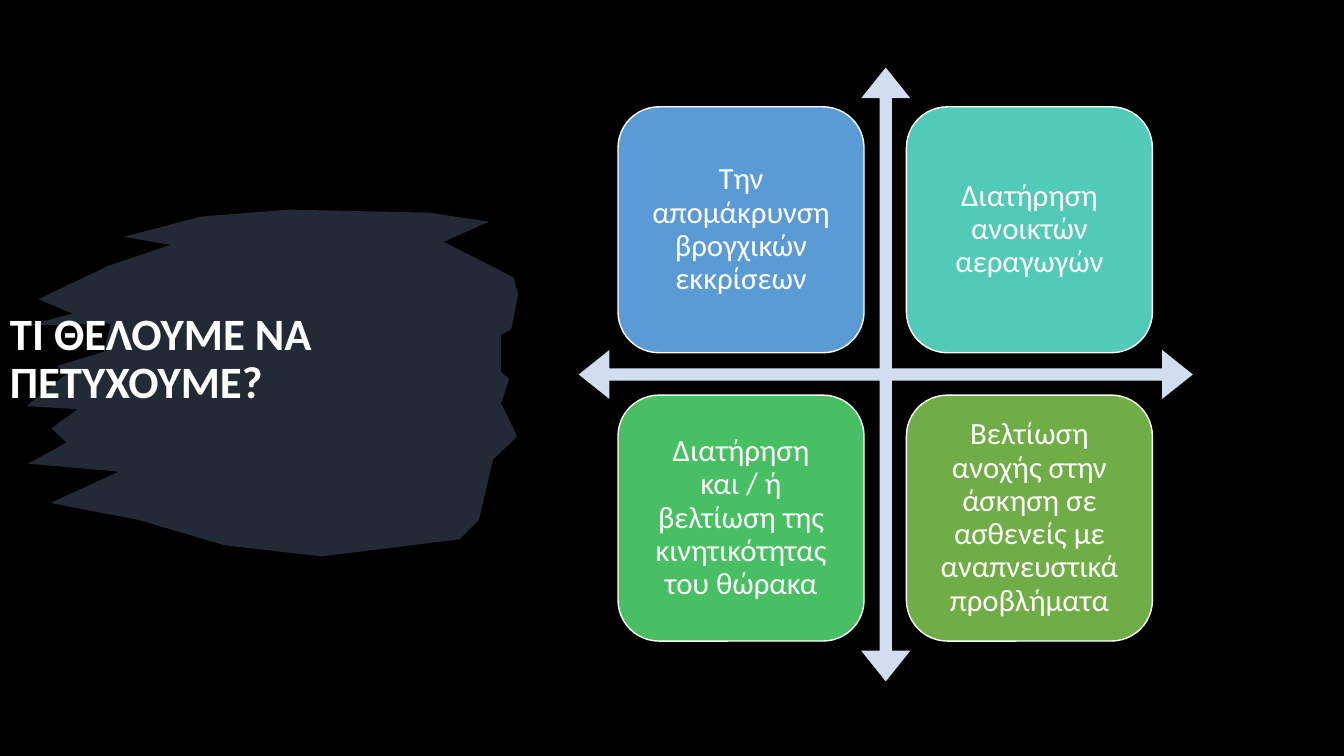
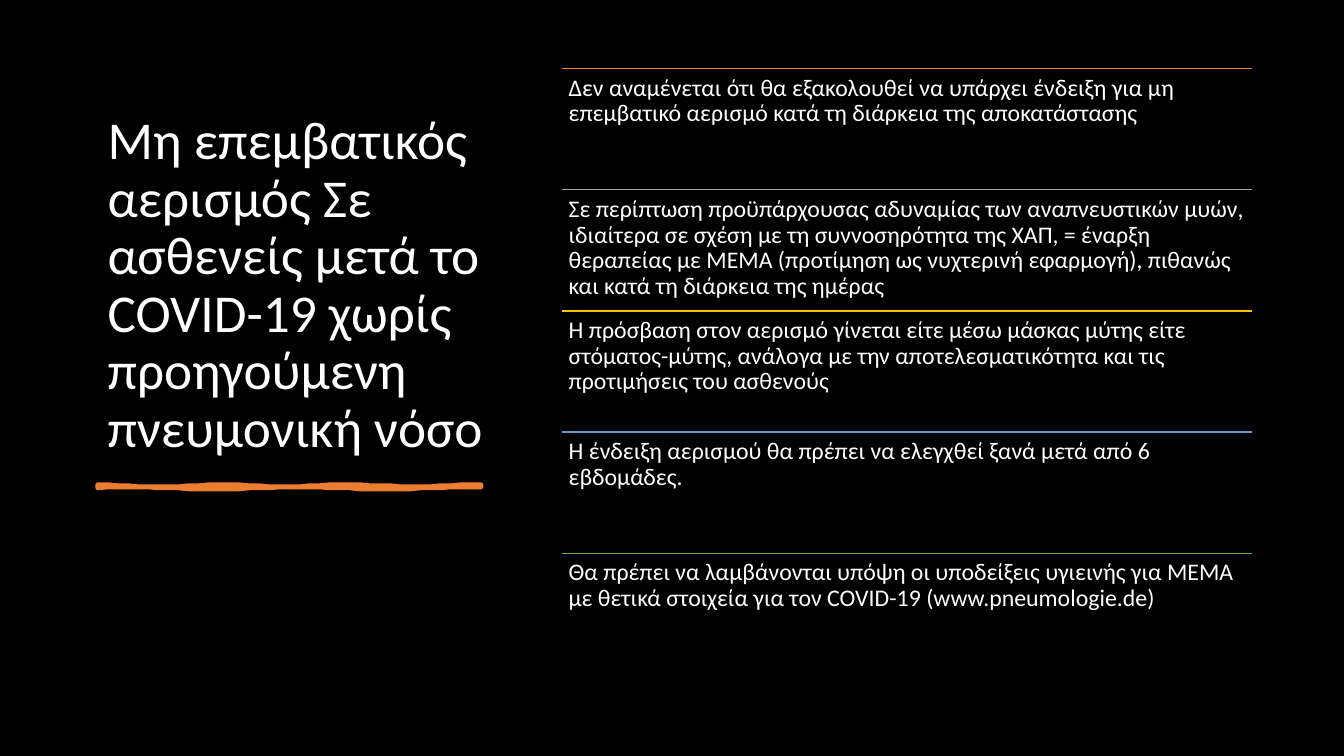
from math import sin
from pptx import Presentation
from pptx.dml.color import RGBColor
from pptx.enum.shapes import MSO_CONNECTOR, MSO_SHAPE
from pptx.enum.text import MSO_ANCHOR, PP_ALIGN
from pptx.oxml.ns import qn
from pptx.util import Inches, Pt
from lxml import etree

# Shared style
FONT = "Calibri"
BACKGROUND = "000000"
WHITE = "FFFFFF"
SLATE = "44546A"
PALE_BLUE = "D2DEEF"
ORANGE = "ED7D31"
GRAY = "A5A5A5"
GOLD = "FFC000"
BLUE = "5B9BD5"
TEAL = "52CAB8"
EMERALD = "49BF64"
GREEN = "70AD47"

# Brush outline in hundredths of an inch, clockwise from the top
BRUSH_STROKE = [
    (286, 208), (425, 211), (485, 220), (440, 240), (509, 275), (514, 292),
    (507, 327), (497, 332), (497, 369), (505, 376), (497, 400), (513, 433),
    (489, 456), (475, 516), (456, 535), (319, 552), (223, 541), (138, 516),
    (50, 499), (118, 468), (28, 460), (66, 439), (51, 425), (77, 406),
    (26, 403), (66, 371), (57, 363), (103, 349), (110, 321), (28, 323),
    (72, 311), (38, 297), (107, 264), (169, 243), (123, 235), (199, 215),
]


def color(hex_value):
    return RGBColor.from_string(hex_value)


def add_slide(presentation):
    slide = presentation.slides.add_slide(presentation.slide_layouts[6])
    slide.background.fill.solid()
    slide.background.fill.fore_color.rgb = color(BACKGROUND)
    return slide


def paint(shape, fill, line=None, width=1):
    shape.shadow.inherit = False
    shape.fill.solid()
    shape.fill.fore_color.rgb = color(fill)
    if line:
        shape.line.color.rgb = color(line)
        shape.line.width = Pt(width)
    else:
        shape.line.fill.background()


def set_opacity(shape, percent):
    fill_color = shape.fill._xPr.find(qn("a:solidFill"))[0]
    etree.SubElement(fill_color, qn("a:alpha"), val=str(percent * 1000))


def write(shape, text, size, anchor, inset=None, bold=False, align=PP_ALIGN.LEFT):
    text_frame = shape.text_frame
    text_frame.text = text
    text_frame.word_wrap = True
    text_frame.vertical_anchor = anchor
    if inset is not None:
        text_frame.margin_left = text_frame.margin_right = Inches(inset)
        text_frame.margin_top = text_frame.margin_bottom = Inches(inset)
    paragraph = text_frame.paragraphs[0]
    paragraph.alignment = align
    paragraph.line_spacing = 0.9
    for run in paragraph.runs:
        run.font.name = FONT
        run.font.size = Pt(size)
        run.font.bold = bold
        run.font.color.rgb = color(WHITE)


def add_text(slide, box, text, size, anchor, **style):
    shape = slide.shapes.add_textbox(*map(Inches, box))
    write(shape, text, size, anchor, **style)


def add_outline(slide, points, fill, line=None, width=1):
    builder = slide.shapes.build_freeform(*points[0], scale=Inches(0.01))
    builder.add_line_segments(points[1:], close=True)
    shape = builder.convert_to_shape()
    paint(shape, fill, line, width)
    return shape


def add_wavy_underline(slide, left, top, width, line):
    """Draw a thin bar with uneven edges; lengths in hundredths of an inch."""
    steps = range(left, left + width + 1, 10)
    upper = [(x, round(top + sin(x / 20))) for x in steps]
    lower = [(x, round(top + 2 + sin(x / 27))) for x in reversed(steps)]
    add_outline(slide, upper + lower, line, line, 3.5)


def add_rule(slide, left, top, width, line):
    connector = slide.shapes.add_connector(
        MSO_CONNECTOR.STRAIGHT,
        Inches(left), Inches(top), Inches(left + width), Inches(top))
    connector.line.color.rgb = color(line)
    connector.line.width = Pt(1)
    etree.SubElement(connector._element.spPr, qn("a:effectLst"))


def add_goal_card(slide, left, top, text, fill):
    side = Inches(2.44)
    card = slide.shapes.add_shape(
        MSO_SHAPE.ROUNDED_RECTANGLE, Inches(left), Inches(top), side, side)
    paint(card, fill, WHITE)
    write(card, text, 22, MSO_ANCHOR.MIDDLE, inset=0.09, align=PP_ALIGN.CENTER)


def build_goals_slide(presentation):
    slide = add_slide(presentation)

    # Brush stroke and title
    brush = add_outline(slide, BRUSH_STROKE, SLATE)
    set_opacity(brush, 50)
    add_text(slide, (0, 1.64, 4.5, 3.86), "ΤΙ ΘΕΛΟΥΜΕ ΝΑ ΠΕΤΥΧΟΥΜΕ?", 32,
             MSO_ANCHOR.MIDDLE, bold=True)

    # Crossed arrows
    arrows = slide.shapes.add_shape(
        MSO_SHAPE.QUAD_ARROW, Inches(5.74), Inches(0.67), Inches(6.09), Inches(6.09))
    for index, value in enumerate((0.02, 0.04, 0.05)):
        arrows.adjustments[index] = value
    paint(arrows, PALE_BLUE)

    # Two by two goals
    goals = [
        ("Την απομάκρυνση βρογχικών εκκρίσεων", BLUE),
        ("Διατήρηση ανοικτών αεραγωγών", TEAL),
        ("Διατήρηση\vκαι / ή\vβελτίωση της κινητικότητας του θώρακα", EMERALD),
        ("Βελτίωση ανοχής στην άσκηση σε ασθενείς με αναπνευστικά προβλήματα", GREEN),
    ]
    pitch = 2.86
    for index, (text, fill) in enumerate(goals):
        row, column = divmod(index, 2)
        add_goal_card(slide, 6.13 + column * pitch, 1.06 + row * pitch, text, fill)


def build_ventilation_slide(presentation):
    slide = add_slide(presentation)

    # Title and hand-drawn underline
    add_text(slide, (0.97, 0.7, 4.08, 3.9),
             "Μη επεμβατικός αερισμός Σε ασθενείς μετά το COVID-19 χωρίς "
             "προηγούμενη πνευμονική νόσο", 38, MSO_ANCHOR.BOTTOM)
    add_wavy_underline(slide, 97, 482, 380, ORANGE)

    # Ruled list
    items = [
        ("Δεν αναμένεται ότι θα εξακολουθεί να υπάρχει ένδειξη για μη "
         "επεμβατικό αερισμό κατά τη διάρκεια της αποκατάστασης", ORANGE),
        ("Σε περίπτωση προϋπάρχουσας αδυναμίας των αναπνευστικών μυών, "
         "ιδιαίτερα σε σχέση με τη συννοσηρότητα της ΧΑΠ, = έναρξη θεραπείας "
         "με ΜΕΜΑ (προτίμηση ως νυχτερινή εφαρμογή), πιθανώς και κατά τη "
         "διάρκεια της ημέρας", GRAY),
        ("Η πρόσβαση στον αερισμό γίνεται είτε μέσω μάσκας μύτης είτε "
         "στόματος-μύτης, ανάλογα με την αποτελεσματικότητα και τις "
         "προτιμήσεις του ασθενούς", GOLD),
        ("Η ένδειξη αερισμού θα πρέπει να ελεγχθεί ξανά μετά από 6 "
         "εβδομάδες.", BLUE),
        ("Θα πρέπει να λαμβάνονται υπόψη οι υποδείξεις υγιεινής για ΜΕΜΑ με "
         "θετικά στοιχεία για τον COVID-19 (www.pneumologie.de)", GREEN),
    ]
    left, first_top, last_top, width = 5.57, 0.68, 5.49, 6.85
    pitch = (last_top - first_top) / (len(items) - 1)
    for index, (text, line) in enumerate(items):
        top = first_top + index * pitch
        add_rule(slide, left, top, width, line)
        add_text(slide, (left, top, width, pitch), text, 17, MSO_ANCHOR.TOP, inset=0.07)


def main():
    presentation = Presentation()
    presentation.slide_width = Inches(13.33)
    presentation.slide_height = Inches(7.5)
    build_goals_slide(presentation)
    build_ventilation_slide(presentation)
    presentation.save("out.pptx")


if __name__ == "__main__":
    main()
